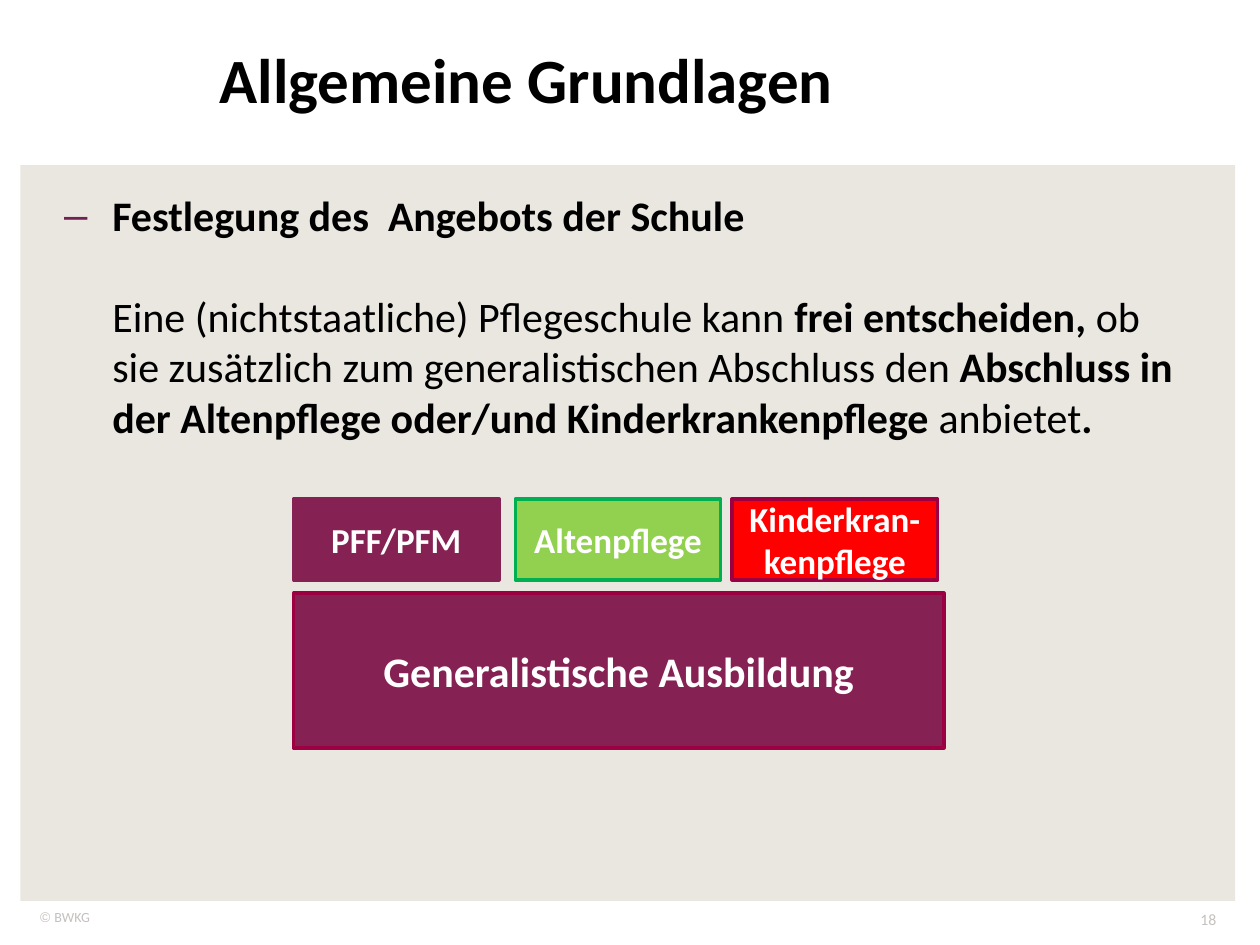
from lxml.etree import SubElement
from pptx import Presentation
from pptx.dml.color import RGBColor
from pptx.enum.shapes import MSO_SHAPE as Shape
from pptx.enum.text import MSO_ANCHOR as Anchor, MSO_AUTO_SIZE as AutoSize, PP_ALIGN as Align
from pptx.oxml.ns import qn
from pptx.util import Cm, Pt

BLACK = RGBColor(0x00, 0x00, 0x00)
WHITE = RGBColor(0xFF, 0xFF, 0xFF)
BEIGE = RGBColor(0xEA, 0xE7, 0xE0)
GREY = RGBColor(0xC5, 0xC1, 0xBE)
PLUM = RGBColor(0x85, 0x21, 0x53)
CRIMSON = RGBColor(0x9D, 0x00, 0x42)
LIME = RGBColor(0x92, 0xD0, 0x50)
GREEN = RGBColor(0x00, 0xB0, 0x50)
RED = RGBColor(0xFF, 0x00, 0x00)

HANGING = Cm(0.97)


def place(shape, left, top, width, height):
    shape.left, shape.top = Cm(left), Cm(top)
    shape.width, shape.height = Cm(width), Cm(height)


def style(run, size, color, bold=False, name="Calibri"):
    run.font.name = name
    run.font.size = Pt(size)
    run.font.bold = bold
    run.font.color.rgb = color


def add_block(slide, box, fill, line=None, label="", size=20):
    block = slide.shapes.add_shape(Shape.RECTANGLE, *map(Cm, box))
    block.shadow.inherit = False
    block.fill.solid()
    block.fill.fore_color.rgb = fill
    if line is None:
        block.line.fill.background()
    else:
        block.line.color.rgb = line
        block.line.width = Pt(2)
    if label:
        frame = block.text_frame
        frame.text = label
        frame.vertical_anchor = Anchor.MIDDLE
        frame.paragraphs[0].alignment = Align.CENTER
        for run in frame.paragraphs[0].runs:
            style(run, size, WHITE, True)


def add_small_print(slide, box, parts, size, align):
    note = slide.shapes.add_textbox(*map(Cm, box)).text_frame
    note.word_wrap = True
    paragraph = note.paragraphs[0]
    paragraph.alignment = align
    for text, font in parts:
        run = paragraph.add_run()
        run.text = text
        style(run, size, GREY, name=font)


def set_title(slide, text):
    title = slide.shapes.title
    place(title, 0.53, 0.69, 20.17, 2.31)
    frame = title.text_frame
    frame.text = text
    frame.auto_size = AutoSize.NONE
    frame.vertical_anchor = Anchor.TOP
    frame.paragraphs[0].alignment = Align.CENTER
    style(frame.paragraphs[0].runs[0], 36, BLACK, True)


def fill_paragraph(paragraph, parts, bullet=None, before=0):
    paragraph.space_before = Pt(before)
    props = paragraph._p.get_or_add_pPr()
    props.set("marL", str(HANGING))
    props.set("indent", str(-HANGING if bullet else 0))
    if bullet:
        bullet_color = SubElement(props, qn("a:buClr"))
        SubElement(bullet_color, qn("a:srgbClr"), val="712153")
        SubElement(props, qn("a:buFont"), typeface="Arial")
        SubElement(props, qn("a:buChar"), char=bullet)
    else:
        SubElement(props, qn("a:buNone"))
    for text, bold in parts:
        run = paragraph.add_run()
        run.text = text
        style(run, 24, BLACK, bold)


def set_body(slide):
    body = slide.placeholders[1]
    place(body, 1.04, 3.69, 23.22, 15.3)
    frame = body.text_frame
    frame.auto_size = AutoSize.NONE
    frame.vertical_anchor = Anchor.TOP
    fill_paragraph(frame.paragraphs[0], [("Festlegung des  Angebots der Schule", True)], bullet="–")
    fill_paragraph(frame.add_paragraph(), [
        ("Eine (nichtstaatliche) Pflegeschule kann ", False),
        ("frei entscheiden, ", True),
        ("ob sie zusätzlich zum generalistischen Abschluss den ", False),
        ("Abschluss in der Altenpflege oder/und Kinderkrankenpflege ", True),
        ("anbietet", False),
        (".", True),
    ], before=29)


def add_training_model(slide):
    # Common base
    add_block(slide, (5.92, 11.96, 13.11, 3.12), PLUM, CRIMSON, "Generalistische Ausbildung", 24)
    # Qualifications resting on it
    qualifications = [
        (5.92, "PFF/PFM", PLUM, PLUM),
        (10.39, "Altenpflege", LIME, GREEN),
        (14.76, "Kinderkran-\vkenpflege", RED, CRIMSON),
    ]
    for left, label, fill, line in qualifications:
        add_block(slide, (left, 10.06, 4.14, 1.63), fill, line, label)


def main():
    deck = Presentation()
    deck.slide_width, deck.slide_height = Cm(25.4), Cm(19.05)
    slide = deck.slides.add_slide(deck.slide_layouts[1])

    # Background panel, behind the placeholders
    add_block(slide, (0.41, 3.33, 24.49, 14.83), BEIGE)
    panel = slide.shapes[-1]._element
    slide.shapes._spTree.insert(2, panel)

    # Title and text
    set_title(slide, "Allgemeine Grundlagen")
    set_body(slide)

    # Diagram
    add_training_model(slide)

    # Footer
    add_small_print(slide, (0.56, 18.19, 2.2, 0.58), [("© ", "Arial"), ("BWKG", "Calibri")], 8, Align.LEFT)
    add_small_print(slide, (18.85, 18.21, 5.92, 0.84), [("18", "Calibri")], 9, Align.RIGHT)

    deck.save("out.pptx")


if __name__ == "__main__":
    main()
